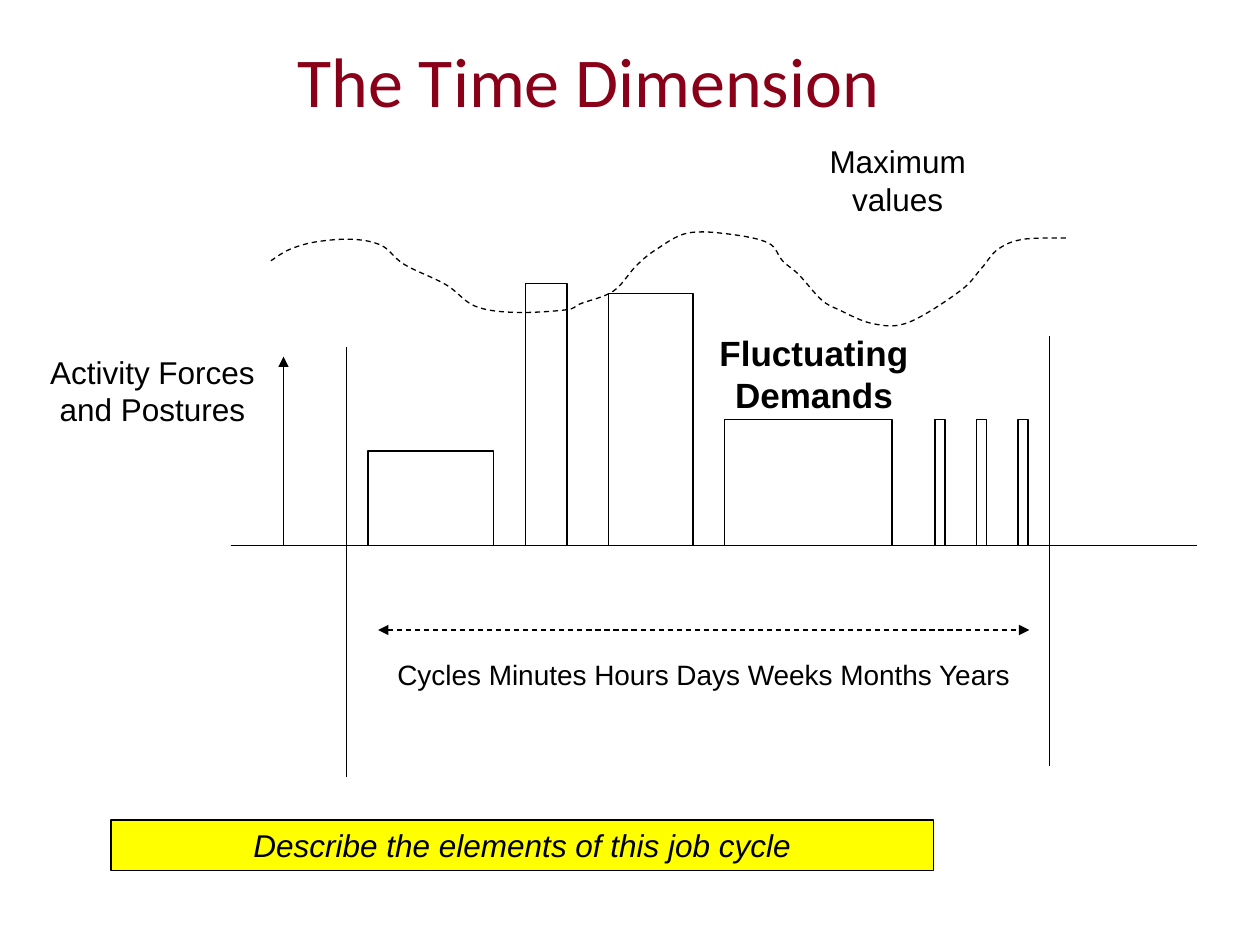
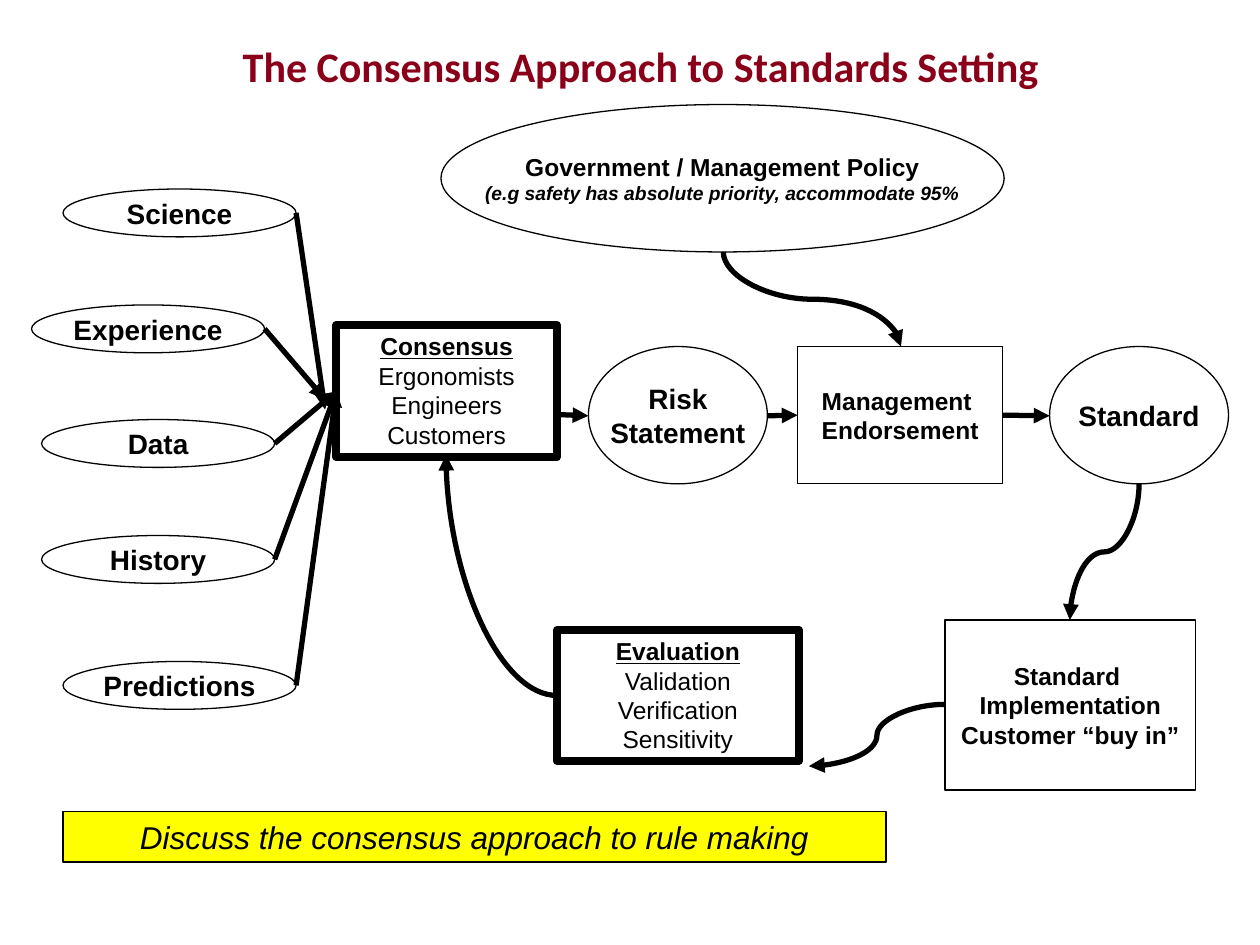
import dataclasses

import lxml.etree
import pptx
import pptx.dml.color
import pptx.enum.dml
import pptx.enum.shapes
import pptx.enum.text
import pptx.oxml.ns
import pptx.util

Inches = pptx.util.Inches
Pt = pptx.util.Pt
RGB = pptx.dml.color.RGBColor
SHAPE = pptx.enum.shapes.MSO_SHAPE
LINK = pptx.enum.shapes.MSO_CONNECTOR
ANCHOR = pptx.enum.text.MSO_ANCHOR
qn = pptx.oxml.ns.qn


@dataclasses.dataclass(frozen=True)
class Theme:
    ink: RGB = RGB(0, 0, 0)
    title: RGB = RGB(0x89, 0x00, 0x18)
    band: RGB = RGB(0xFF, 0xFF, 0x00)
    head: str = "Calibri"
    body: str = "Arial"
    big: int = 40
    medium: int = 24
    demand: int = 20
    label: int = 18
    node: int = 16
    small: int = 14
    note: int = 11
    thin: float = 0.75
    edge: float = 1
    arrow: float = 3
    frame: float = 4.5


THEME = Theme()


def style(run, size, bold=False, italic=False, line=False,
          face=THEME.body, color=THEME.ink):
    font = run.font
    font.name, font.size = face, Pt(size)
    font.bold, font.italic, font.underline = bold, italic, line
    font.color.rgb = color


def write(shape, text, size, wrap=True, anchor=ANCHOR.TOP, **look):
    frame = shape.text_frame
    frame.word_wrap = wrap
    frame.vertical_anchor = anchor
    frame.text = text
    for para in frame.paragraphs:
        para.alignment = pptx.enum.text.PP_ALIGN.CENTER
        for run in para.runs:
            style(run, size, **look)
    return frame


def label(slide, text, place, size, **look):
    box = slide.shapes.add_textbox(*map(Inches, place))
    write(box, text, size, **look)


def title(slide, text, place, size, bold=False):
    label(slide, text, place, size, anchor=ANCHOR.MIDDLE, bold=bold,
          face=THEME.head, color=THEME.title)


def draw(slide, kind, place, width=THEME.thin):
    shape = slide.shapes.add_shape(kind, *map(Inches, place))
    outline(shape, width)
    return shape


def outline(shape, width):
    shape.shadow.inherit = False
    shape.fill.background()
    shape.line.color.rgb = THEME.ink
    shape.line.width = Pt(width)


def band(slide, text, left, top):
    shape = draw(slide, SHAPE.RECTANGLE, (left, top, 6.53, 0.4), THEME.edge)
    shape.fill.solid()
    shape.fill.fore_color.rgb = THEME.band
    write(shape, text, THEME.label, italic=True)


def node(slide, kind, text, place, size=THEME.node):
    shape = draw(slide, kind, place)
    write(shape, text, size, wrap=False, anchor=ANCHOR.MIDDLE, bold=True)
    return shape


def panel(slide, head, rest, place):
    shape = draw(slide, SHAPE.RECTANGLE, place, THEME.frame)
    frame = write(shape, head, THEME.small, bold=True, line=True)
    run = frame.paragraphs[0].add_run()
    run.text = rest
    style(run, THEME.small)
    return shape


def dash(shape):
    shape.line.dash_style = pptx.enum.dml.MSO_LINE.DASH


def join(slide, start, end, width=THEME.thin, ends=(), kind=LINK.STRAIGHT):
    line = slide.shapes.add_connector(kind, *map(Inches, start + end))
    line.line.color.rgb = THEME.ink
    line.line.width = Pt(width)
    props = line._element.spPr
    lxml.etree.SubElement(props, qn("a:effectLst"))
    for tip in ends:
        lxml.etree.SubElement(line.line._get_or_add_ln(), qn("a:" + tip),
                              type="triangle")
    return line


def arrow(slide, start, end, kind=LINK.STRAIGHT):
    return join(slide, start, end, THEME.arrow, ["tailEnd"], kind)


def bend(slide, start, end):
    line = arrow(slide, start, end, LINK.CURVE)
    line._element.spPr.find(qn("a:prstGeom")).set("prst", "curvedConnector2")


def drop(slide, start, end):
    (x1, y1), (x2, y2) = start, end
    line = arrow(slide, start, end, LINK.CURVE)
    wide, high = y2 - y1, abs(x2 - x1)
    line.left, line.top = Inches((x1 + x2 - wide) / 2), Inches((y1 + y2 - high) / 2)
    line.width, line.height = Inches(wide), Inches(high)
    frame = line._element.spPr.find(qn("a:xfrm"))
    for name in ("flipH", "flipV"):
        frame.attrib.pop(name, None)
    frame.set("rot", str((270 if x2 > x1 else 90) * 60000))
    if x2 > x1:
        frame.set("flipH", "1")


def wave(slide, points):
    padded = [points[0], *points, points[-1]]
    spots = []
    for a, b, c, d in zip(padded, padded[1:], padded[2:], padded[3:]):
        spots.append([q + (r - p) / 6 for p, q, r in zip(a, b, c)])
        spots.append([r - (s - q) / 6 for q, r, s in zip(b, c, d)])
        spots.append(c)
    build = slide.shapes.build_freeform(
        Inches(points[0][0]), Inches(points[0][1]))
    build.add_line_segments(
        [(Inches(x), Inches(y)) for x, y in spots], close=False)
    shape = build.convert_to_shape()
    outline(shape, THEME.thin)
    dash(shape)
    track = next(shape._element.iter(qn("a:path")))
    steps = track.findall(qn("a:lnTo"))
    for at in range(0, len(steps), 3):
        curve = lxml.etree.SubElement(track, qn("a:cubicBezTo"))
        for step in steps[at:at + 3]:
            curve.append(step[0])
            track.remove(step)


def time_slide(slide):
    title(slide, "The Time Dimension", (0.42, 0.17, 8.5, 0.92), THEME.big)
    base = 4.33
    join(slide, (2.75, 2.75), (2.75, 6.17))
    join(slide, (1.83, base), (9.5, base))
    join(slide, (8.33, 2.67), (8.33, 6.08))
    join(slide, (2.25, base), (2.25, 2.83), ends=["tailEnd"])
    dash(join(slide, (3, 5), (8.17, 5), ends=["headEnd", "tailEnd"]))
    wave(slide, [
        (2.15, 2.07), (2.3, 1.98), (2.51, 1.92), (2.8, 1.9), (3.03, 1.95),
        (3.21, 2.1), (3.54, 2.26), (3.77, 2.43), (4.08, 2.48), (4.49, 2.46),
        (4.61, 2.41), (4.87, 2.31), (5.05, 2.11), (5.21, 1.98), (5.46, 1.85),
        (5.8, 1.86), (6.1, 1.93), (6.21, 2.07), (6.34, 2.18), (6.52, 2.38),
        (6.66, 2.46), (6.93, 2.57), (7.21, 2.56), (7.62, 2.31), (7.79, 2.13),
        (7.92, 1.98), (8.12, 1.9), (8.48, 1.89)])
    bars = [(2.92, 1, 0.75), (4.17, 0.33, 2.08), (4.83, 0.67, 2),
            (5.75, 1.33, 1)]
    bars += [(7.42 + 0.33 * i, 0.08, 1) for i in range(3)]
    for left, wide, high in bars:
        draw(slide, SHAPE.RECTANGLE, (left, base - high, wide, high))
    label(slide, "Activity Forces and Postures", (0.17, 2.75, 2.08, 1.3),
          THEME.label)
    label(slide, "Maximum values", (6.25, 1.08, 1.75, 0.9), THEME.label)
    label(slide, "Cycles Minutes Hours Days Weeks Months Years",
          (3, 5.17, 5.17, 0.37), THEME.node)
    label(slide, "Fluctuating Demands", (5.5, 2.58, 1.92, 0.77),
          THEME.demand, bold=True)
    band(slide, "Describe the elements of this job cycle", 0.88, 6.51)


def rule_slide(slide):
    title(slide, "The Consensus Approach to Standards Setting",
          (0.42, 0.26, 9.33, 0.52), THEME.medium, bold=True)
    oval, rect = SHAPE.OVAL, SHAPE.RECTANGLE
    group = panel(slide, "Consensus", " Ergonomists Engineers Customers",
                  (2.67, 2.58, 1.75, 1.05))
    panel(slide, "Evaluation ", "Validation Verification Sensitivity",
          (4.42, 5, 1.92, 1.04))
    inputs = [("Science", 0.5, 1.5, (2.58, 3.25)),
              ("Experience", 0.25, 2.42, (2.58, 3.17)),
              ("Data", 0.33, 3.33, None),
              ("History", 0.33, 4.25, None),
              ("Predictions", 0.5, 5.25, None)]
    for text, left, top, goal in inputs:
        node(slide, oval, text, (left, top, 1.85, 0.38))
        line = arrow(slide, (left + 1.85, top + 0.19), goal or (2.67, 3.11))
        if not goal:
            line.end_connect(group, 1)
    node(slide, oval, "Risk\nStatement", (4.67, 2.75, 1.42, 1.09))
    node(slide, oval, "Standard", (8.33, 2.75, 1.42, 1.09))
    approve = node(slide, rect, "Management \nEndorsement",
                   (6.33, 2.75, 1.63, 1.09), THEME.small)
    node(slide, rect, "Standard \nImplementation\nCustomer “buy in”",
         (7.5, 4.92, 1.99, 1.35), THEME.small)
    policy = node(slide, oval, "Government / Management Policy\n"
                  "(e.g safety has absolute priority, accommodate 95%",
                  (3.5, 0.83, 4.47, 1.17), THEME.small)
    style(policy.text_frame.paragraphs[1].runs[0], THEME.note,
          bold=True, italic=True)
    arrow(slide, (4.42, 3.29), (4.67, 3.3))
    arrow(slide, (6.09, 3.3), (6.33, 3.3)).end_connect(approve, 1)
    arrow(slide, (7.96, 3.3), (8.33, 3.3)).begin_connect(approve, 3)
    drop(slide, (9.04, 3.84), (8.49, 4.92))
    drop(slide, (5.74, 2), (7.15, 2.75))
    bend(slide, (4.42, 5.52), (3.54, 3.61))
    arrow(slide, (7.5, 5.59), (6.42, 6.08), LINK.CURVE)
    band(slide, "Discuss the consensus approach to rule making", 0.5, 6.44)


def main():
    deck = pptx.Presentation()
    deck.slide_width, deck.slide_height = Inches(10), Inches(7.5)
    for fill in (time_slide, rule_slide):
        fill(deck.slides.add_slide(deck.slide_layouts[6]))
    deck.save("out.pptx")


if __name__ == "__main__":
    main()
